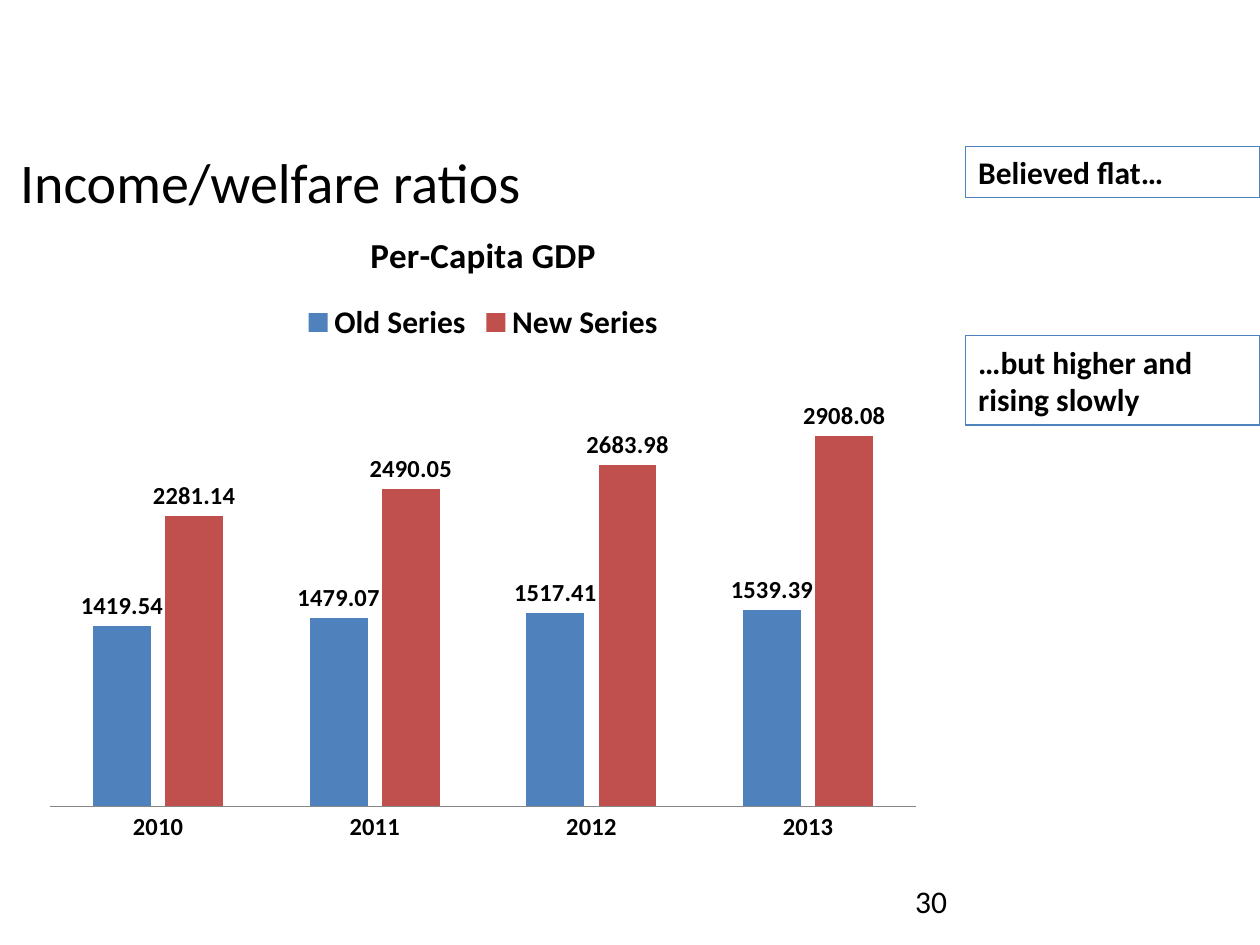
from lxml.etree import SubElement
from pptx import Presentation
from pptx.chart.data import CategoryChartData
from pptx.dml.color import RGBColor
from pptx.enum.chart import XL_CHART_TYPE, XL_LABEL_POSITION, XL_LEGEND_POSITION, XL_TICK_MARK
from pptx.enum.shapes import MSO_SHAPE
from pptx.enum.text import MSO_ANCHOR, PP_ALIGN
from pptx.oxml.ns import qn
from pptx.util import Cm, Pt

COLORS = {"text": "000000", "old": "4F81BD", "new": "C0504D", "axis": "868686"}
FONT = "Calibri"
YEARS = ["2010", "2011", "2012", "2013"]
SERIES = {
    "Old Series": ("old", [1419.54, 1479.07, 1517.41, 1539.39]),
    "New Series": ("new", [2281.14, 2490.05, 2683.98, 2908.08]),
}


def color(name):
    """Return the palette colour with the given name."""
    return RGBColor.from_string(COLORS[name])


def style_font(font, size, bold=False):
    """Apply the slide typeface, size, weight and text colour."""
    font.name = FONT
    font.size = Pt(size)
    font.bold = bold
    font.color.rgb = color("text")


def fill_text(shape, text, size, bold=False, alignment=PP_ALIGN.LEFT):
    """Write one wrapped, vertically centred paragraph into a shape."""
    frame = shape.text_frame
    frame.word_wrap = True
    frame.vertical_anchor = MSO_ANCHOR.MIDDLE
    paragraph = frame.paragraphs[0]
    paragraph.text = text
    paragraph.alignment = alignment
    style_font(paragraph.font, size, bold)


def add_label(slide, box, text, size, alignment=PP_ALIGN.LEFT):
    """Add a plain text box filling the given box."""
    fill_text(slide.shapes.add_textbox(*map(Cm, box)), text, size, alignment=alignment)


def add_callout(slide, box, text):
    """Add an outlined remark filling the given box."""
    shape = slide.shapes.add_shape(MSO_SHAPE.RECTANGLE, *map(Cm, box))
    shape.shadow.inherit = False
    shape.fill.background()
    shape.line.color.rgb = color("old")
    shape.line.width = Pt(0.75)
    fill_text(shape, text, 18, bold=True)


def add_income_chart(slide, box):
    """Add the clustered column chart of per-capita GDP."""
    data = CategoryChartData(number_format="0.00")
    data.categories = YEARS
    for name, (_, values) in SERIES.items():
        data.add_series(name, values)
    frame = slide.shapes.add_chart(XL_CHART_TYPE.COLUMN_CLUSTERED, *map(Cm, box), data)
    chart = frame.chart
    style_font(chart.font, 14, bold=True)

    chart.has_title = True
    title = chart.chart_title.text_frame.paragraphs[0]
    title.text = "Per-Capita GDP"
    style_font(title.font, 20, bold=True)
    chart.chart_title.include_in_layout = False
    SubElement(chart.chart_title._element, qn("c:overlay")).set("val", "0") \
        if chart.chart_title._element.find(qn("c:overlay")) is None else None

    chart.has_legend = True
    chart.legend.position = XL_LEGEND_POSITION.TOP
    chart.legend.include_in_layout = False
    style_font(chart.legend.font, 18, bold=True)

    chart.value_axis.visible = False
    chart.value_axis.has_major_gridlines = False
    chart.value_axis.minimum_scale = 0
    chart.value_axis.maximum_scale = 3500
    chart.category_axis.major_tick_mark = XL_TICK_MARK.NONE
    chart.category_axis.format.line.color.rgb = color("axis")

    plot = chart.plots[0]
    plot.gap_width = 150
    plot.overlap = -25
    plot.vary_by_categories = False
    plot.has_data_labels = True
    labels = plot.data_labels
    labels.show_value = True
    labels.number_format = "0.00"
    labels.number_format_is_linked = False
    labels.position = XL_LABEL_POSITION.OUTSIDE_END
    style_font(labels.font, 14, bold=True)
    for series, (name, _) in zip(plot.series, SERIES.values()):
        series.format.fill.solid()
        series.format.fill.fore_color.rgb = color(name)


def main():
    """Build the income and welfare slide and save it."""
    presentation = Presentation()
    presentation.slide_width = Cm(25.4)
    presentation.slide_height = Cm(19.05)
    slide = presentation.slides.add_slide(presentation.slide_layouts[6])
    add_label(slide, (18.2, 17.65, 5.93, 1.01), "30", 18)
    add_income_chart(slide, (0.64, 4.11, 18.2, 13.12))
    add_label(slide, (0, 2.7, 10.75, 1.9), "Income/welfare ratios", 32, PP_ALIGN.RIGHT)
    add_callout(slide, (19.47, 2.96, 5.93, 1.03), "Believed flat…")
    add_callout(slide, (19.47, 6.77, 5.93, 1.8), "…but higher and rising slowly")
    presentation.save("out.pptx")


if __name__ == "__main__":
    main()
